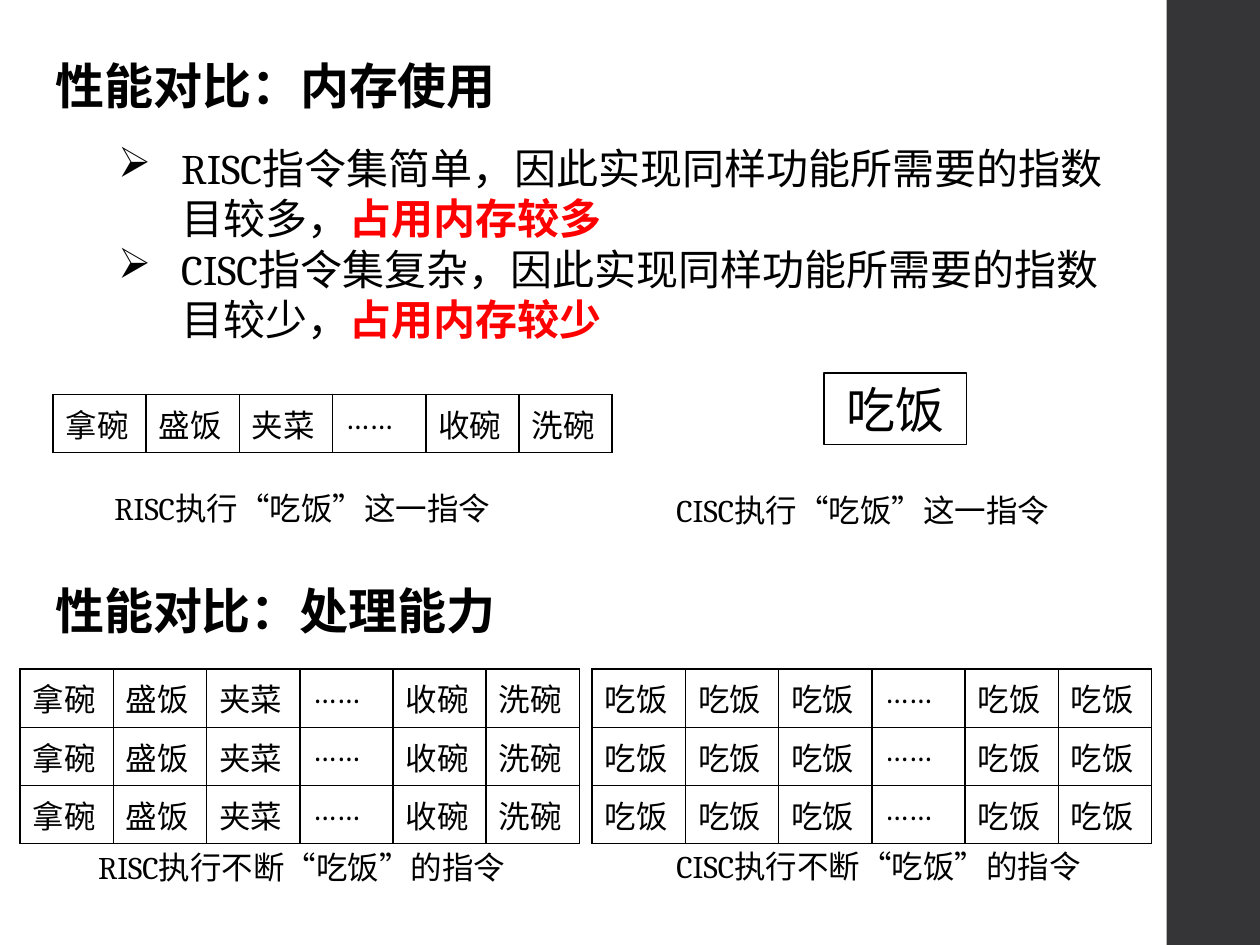
from lxml.etree import SubElement as Sub
from pptx import Presentation
from pptx.dml.color import RGBColor as RGB
from pptx.enum.shapes import MSO_SHAPE as Shape
from pptx.enum.text import MSO_ANCHOR as Anchor, MSO_AUTO_SIZE as Fit, PP_ALIGN as Align
from pptx.oxml.ns import qn
from pptx.util import Inches, Pt

BLACK = RGB(0x00, 0x00, 0x00)
RED = RGB(0xFF, 0x00, 0x00)
SLATE = RGB(0x35, 0x35, 0x37)
SERIF, SANS = "Cambria", "Noto Sans CJK SC"
COL, ROW = 0.74, 0.41


def style(par, size, name=SERIF, bold=False, align=Align.LEFT):
    par.alignment = align
    font = par.font
    font.size, font.name, font.bold = Pt(size), name, bold
    font.color.rgb = BLACK


def place(shape, x, y, w, h):
    """Position a text shape and give its frame a plain, top-anchored setup."""
    shape.left, shape.top, shape.width, shape.height = map(Inches, (x, y, w, h))
    frame = shape.text_frame
    frame.word_wrap = True
    frame.auto_size = Fit.NONE
    frame.vertical_anchor = Anchor.TOP
    return frame


prs = Presentation()
prs.slide_width, prs.slide_height = Inches(10), Inches(7.5)
slide = prs.slides.add_slide(prs.slide_layouts[5])
shapes = slide.shapes

# Side band
band = shapes.add_shape(Shape.RECTANGLE, Inches(9.26), 0, Inches(0.74), Inches(7.5))
band.shadow.inherit = False
band.fill.solid()
band.fill.fore_color.rgb = SLATE
band.line.fill.background()

# Headings
second = shapes.add_textbox(0, 0, 0, 0)
for head, y, text in [
    (shapes.title, 0.39, "性能对比：内存使用"),
    (second, 4.56, "性能对比：处理能力"),
]:
    frame = place(head, 0.34, y, 4.36, 0.57)
    frame.text = text
    style(frame.paragraphs[0], 28, SANS, True)

# Bullets
frame = place(shapes.add_textbox(0, 0, 0, 0), 0.34, 1.08, 8.53, 1.72)
points = [
    ("RISC指令集简单，因此实现同样功能所需要的指数目较多，", "占用内存较多"),
    ("CISC指令集复杂，因此实现同样功能所需要的指数目较少，", "占用内存较少"),
]
for i, (lead, key) in enumerate(points):
    par = frame.add_paragraph() if i else frame.paragraphs[0]
    par.level = 1
    style(par, 24)
    par.add_run().text = lead
    run = par.add_run()
    run.text = key
    run.font.bold = True
    run.font.color.rgb = RED
    props = par._p.get_or_add_pPr()
    props.set("marL", str(Inches(1)))
    props.set("indent", str(Inches(-0.5)))
    mark = props.makeelement(qn("a:buChar"), {"char": "➢"})
    props.find(qn("a:defRPr")).addprevious(mark)

# Instruction tables
steps = ["拿碗", "盛饭", "夹菜", "……", "收碗", "洗碗"]
meals = ["吃饭"] * 3 + ["……"] + ["吃饭"] * 2
for x, y, count, words in [
    (0.42, 3.13, 1, steps),
    (0.16, 5.31, 3, steps),
    (4.7, 5.31, 3, meals),
]:
    size = Inches(COL * len(words)), Inches(ROW * count)
    table = shapes.add_table(count, len(words), Inches(x), Inches(y), *size).table
    table.first_row = table.horz_banding = False
    for row in table.rows:
        for cell, word in zip(row.cells, words):
            cell.text = word
            style(cell.text_frame.paragraphs[0], 18)
            props = cell._tc.get_or_add_tcPr()
            for side in ("lnL", "lnR", "lnT", "lnB"):
                edge = Sub(props, qn(f"a:{side}"), w=str(Pt(1)))
                Sub(Sub(edge, qn("a:solidFill")), qn("a:srgbClr"), val=str(BLACK))
            cell.fill.background()

# Single CISC instruction
box = shapes.add_shape(Shape.RECTANGLE, 0, 0, 0, 0)
box.shadow.inherit = False
box.fill.background()
box.line.color.rgb = BLACK
box.line.width = Pt(0.75)
frame = place(box, 6.54, 2.96, 1.13, 0.57)
frame.text = "吃饭"
style(frame.paragraphs[0], 28, align=Align.CENTER)

# Captions
for x, y, text in [
    (0.81, 3.83, "RISC执行“吃饭”这一指令"),
    (5.27, 3.85, "CISC执行“吃饭”这一指令"),
    (0.68, 6.68, "RISC执行不断“吃饭”的指令"),
    (5.27, 6.67, "CISC执行不断“吃饭”的指令"),
]:
    frame = place(shapes.add_textbox(0, 0, 0, 0), x, y, 3.67, 0.4)
    frame.text = text
    style(frame.paragraphs[0], 18)

prs.save("out.pptx")
